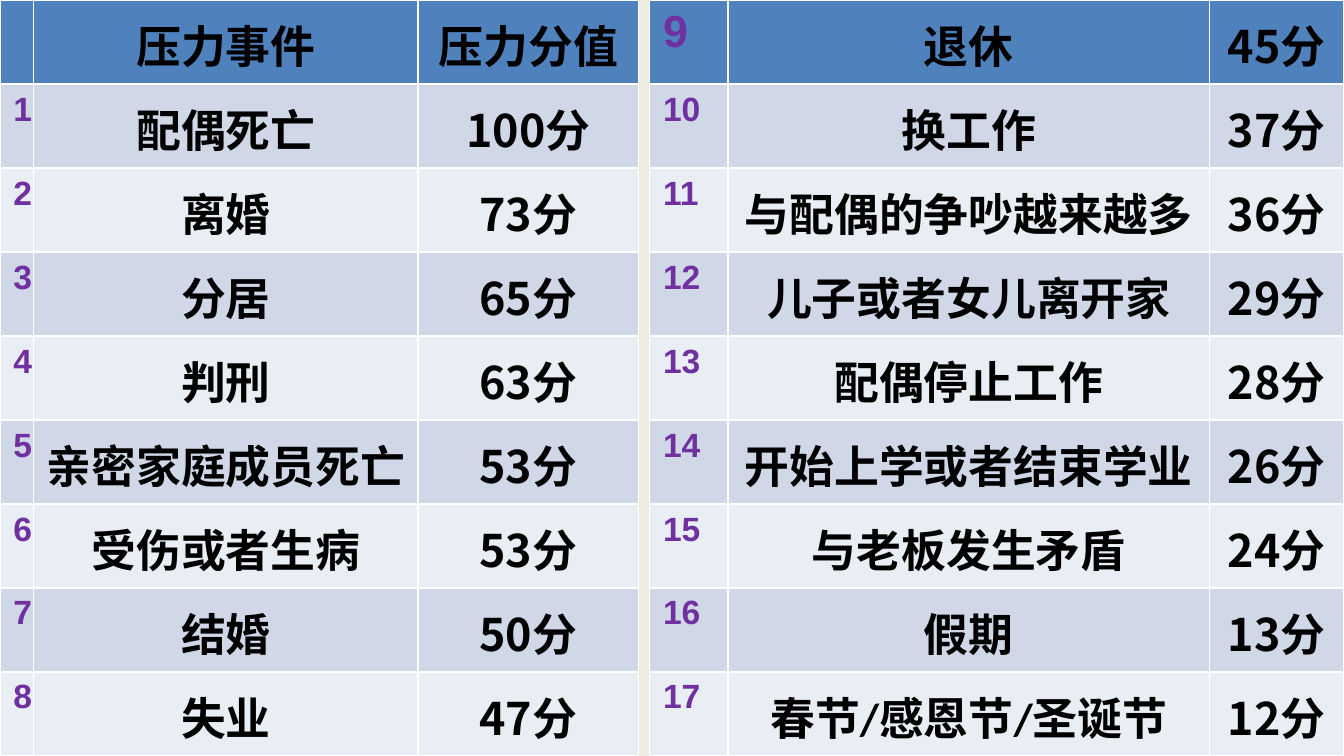
from pptx import Presentation
from pptx.dml.color import RGBColor
from pptx.enum.text import MSO_ANCHOR, PP_ALIGN
from pptx.util import Pt

COLORS = {
    "background": "EEECE1",
    "header": "4F81BD",
    "odd": "D0D8E8",
    "even": "E9EDF4",
    "number": "7030A0",
    "text": "000000",
}
TEXT_FONT, NUMBER_FONT, SCORE_FONT = "Calibri", "Arial", "Noto Sans CJK SC"
UNIT = "分"
ROW_HEIGHT = 45

EVENTS = [
    ("配偶死亡", 100), ("离婚", 73), ("分居", 65), ("判刑", 63),
    ("亲密家庭成员死亡", 53), ("受伤或者生病", 53), ("结婚", 50), ("失业", 47),
    ("退休", 45), ("换工作", 37), ("与配偶的争吵越来越多", 36),
    ("儿子或者女儿离开家", 29), ("配偶停止工作", 28),
    ("开始上学或者结束学业", 26), ("与老板发生矛盾", 24), ("假期", 13),
    ("春节/感恩节/圣诞节", 12),
]


class StressSlide:
    """Holds the table style and the current slide."""

    def __init__(self, presentation):
        self.slide = presentation.slides.add_slide(presentation.slide_layouts[6])
        fill = self.slide.background.fill
        fill.solid()
        fill.fore_color.rgb = RGBColor.from_string(COLORS["background"])

    def set_font(self, paragraph, name, size, color):
        font = paragraph.font
        font.name, font.size, font.bold = name, Pt(size), True
        font.color.rgb = RGBColor.from_string(COLORS[color])

    def number_cell(self, cell, number, size):
        paragraph = cell.text_frame.paragraphs[0]
        paragraph.add_run().text = number
        self.set_font(paragraph, NUMBER_FONT, size, "number")

    def text_cell(self, cell, text):
        cell.vertical_anchor = MSO_ANCHOR.MIDDLE
        cell.margin_left = cell.margin_right = Pt(5)
        cell.margin_top = cell.margin_bottom = 0
        paragraph = cell.text_frame.paragraphs[0]
        paragraph.alignment = PP_ALIGN.CENTER
        paragraph.line_spacing = 1.07
        # A score is a number in its own font followed by the unit
        if isinstance(text, int):
            run = paragraph.add_run()
            run.text = str(text)
            run.font.name = SCORE_FONT
            text = UNIT
        paragraph.add_run().text = text
        self.set_font(paragraph, TEXT_FONT, 24, "text")

    def table(self, left, widths, rows):
        frame = self.slide.shapes.add_table(
            len(rows), len(widths), Pt(left), 0,
            Pt(sum(widths)), Pt(ROW_HEIGHT * len(rows)))
        table = frame.table
        for column, width in zip(table.columns, widths):
            column.width = Pt(width)
        for index, (number, event, score) in enumerate(rows):
            cells = table.rows[index].cells
            band = "header" if index == 0 else "odd" if index % 2 else "even"
            for cell in cells:
                cell.fill.solid()
                cell.fill.fore_color.rgb = RGBColor.from_string(COLORS[band])
            number_cell, event_cell, score_cell = cells
            if number:
                self.number_cell(number_cell, number, 18 if index else 24)
            self.text_cell(event_cell, event)
            self.text_cell(score_cell, score)


def main():
    presentation = Presentation()
    presentation.slide_width, presentation.slide_height = Pt(720), Pt(405)
    stress_slide = StressSlide(presentation)

    # Number the events and split them after the eighth
    numbered = [(str(number), event, score)
                for number, (event, score) in enumerate(EVENTS, 1)]
    header = ("", "压力事件", "压力分值")
    stress_slide.table(0, (18, 206, 118), [header] + numbered[:8])
    stress_slide.table(348, (42, 258, 72), numbered[8:])

    presentation.save("out.pptx")


if __name__ == "__main__":
    main()
